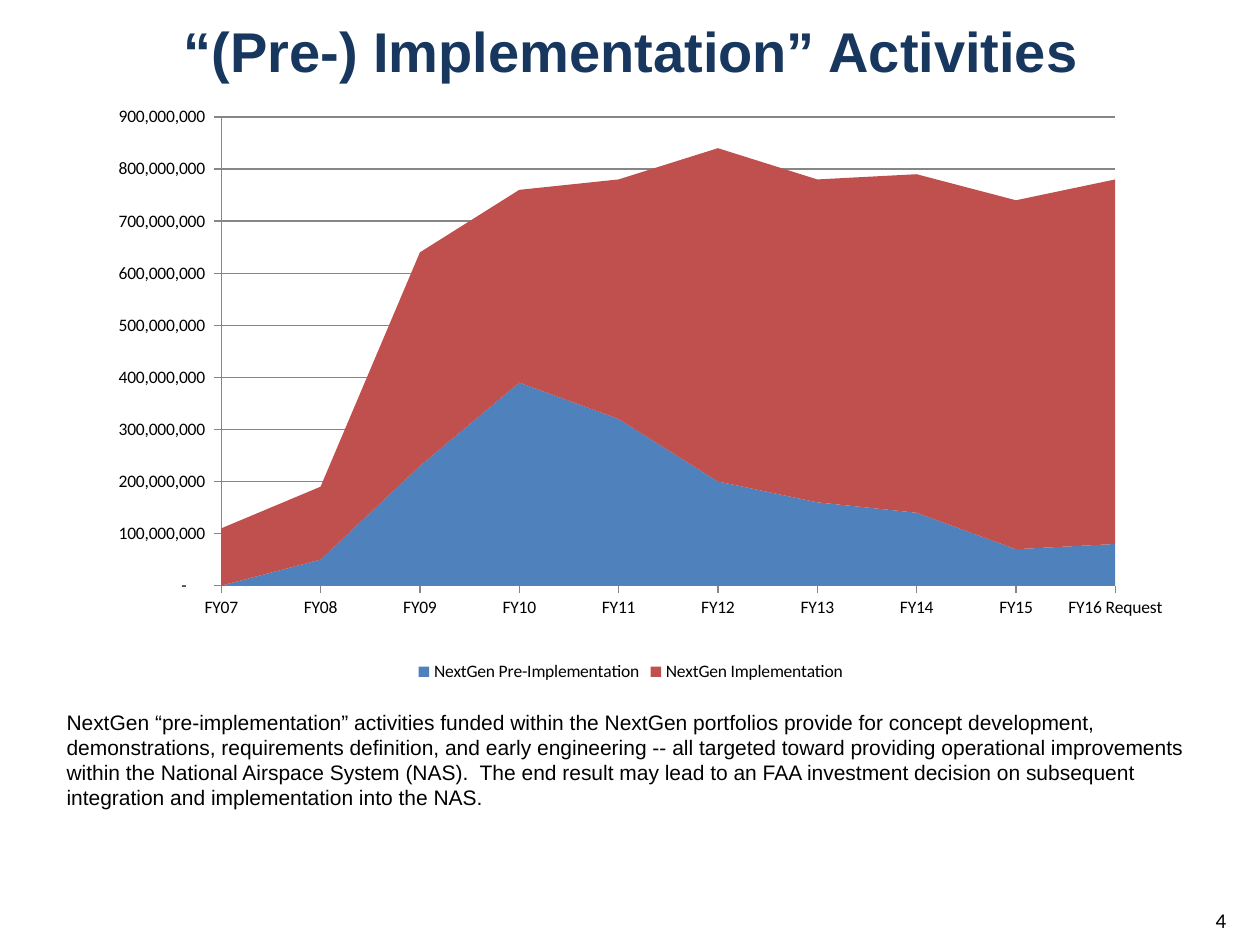
from lxml.etree import SubElement
from pptx import Presentation
from pptx.chart.data import CategoryChartData
from pptx.dml.color import RGBColor
from pptx.enum.chart import XL_CHART_TYPE, XL_LEGEND_POSITION, XL_TICK_MARK
from pptx.enum.text import MSO_ANCHOR, PP_ALIGN
from pptx.oxml.ns import qn
from pptx.util import Inches, Pt

COLORS = {
    "title": "17375E",
    "text": "000000",
    "grid": "868686",
    "pre_implementation": "4F81BD",
    "implementation": "C0504D",
}
MILLION = 1_000_000
YEARS = [f"FY{year:02d}" for year in range(7, 16)] + ["FY16 Request"]
# Name, colour key, funding in millions
FUNDING = [
    ("NextGen Pre-Implementation", "pre_implementation",
     [0, 50, 230, 390, 320, 200, 160, 140, 70, 80]),
    ("NextGen Implementation", "implementation",
     [110, 140, 410, 370, 460, 640, 620, 650, 670, 700]),
]
PLOT_LAYOUT = {"x": 0.12, "y": 0.04, "w": 0.83, "h": 0.79}
EXPLANATION = (
    "NextGen “pre-implementation” activities funded within the NextGen portfolios "
    "provide for concept development, demonstrations, requirements definition, and "
    "early engineering -- all targeted toward providing operational improvements "
    "within the National Airspace System (NAS).  The end result may lead to an FAA "
    "investment decision on subsequent integration and implementation into the NAS."
)


def color(key):
    return RGBColor.from_string(COLORS[key])


def add_text(slide, box, text, size=12, font_name="Arial", color_key="text",
             bold=False, align=PP_ALIGN.LEFT, anchor=MSO_ANCHOR.TOP):
    frame = slide.shapes.add_textbox(*map(Inches, box)).text_frame
    frame.word_wrap = True
    frame.vertical_anchor = anchor
    paragraph = frame.paragraphs[0]
    paragraph.text = text
    paragraph.alignment = align
    font = paragraph.font
    font.name, font.size, font.bold = font_name, Pt(size), bold
    font.color.rgb = color(color_key)


def set_plot_layout(chart):
    """Fix the inner plot area as fractions of the chart."""
    plot_area = chart.element.find(".//" + qn("c:plotArea"))
    layout = plot_area.find(qn("c:layout"))
    if layout is None:
        layout = SubElement(plot_area, qn("c:layout"))
        plot_area.insert(0, layout)
    manual = SubElement(layout, qn("c:manualLayout"))
    settings = {"layoutTarget": "inner", "xMode": "edge", "yMode": "edge", **PLOT_LAYOUT}
    for tag, value in settings.items():
        SubElement(manual, qn(f"c:{tag}")).set("val", str(value))
    # Areas start on the value axis itself
    plot_area.find(".//" + qn("c:crossBetween")).set("val", "midCat")


def style_axis(axis):
    axis.major_tick_mark = XL_TICK_MARK.OUTSIDE
    axis.minor_tick_mark = XL_TICK_MARK.NONE
    axis.format.line.color.rgb = color("grid")
    axis.format.line.width = Pt(0.75)


def add_funding_chart(slide, box):
    data = CategoryChartData()
    data.categories = YEARS
    for name, _, millions in FUNDING:
        data.add_series(name, [value * MILLION for value in millions])
    chart = slide.shapes.add_chart(
        XL_CHART_TYPE.AREA_STACKED, *map(Inches, box), data).chart
    chart.has_title = False
    chart.font.name, chart.font.size = "Calibri", Pt(10)
    chart.font.color.rgb = color("text")

    for series, (_, color_key, _) in zip(chart.plots[0].series, FUNDING):
        series.format.fill.solid()
        series.format.fill.fore_color.rgb = color(color_key)

    # Axes and gridlines
    style_axis(chart.category_axis)
    chart.category_axis.has_major_gridlines = False
    value_axis = chart.value_axis
    style_axis(value_axis)
    value_axis.minimum_scale, value_axis.maximum_scale = 0, 900 * MILLION
    value_axis.major_unit = 100 * MILLION
    value_axis.has_major_gridlines = True
    gridline = value_axis.major_gridlines.format.line
    gridline.color.rgb, gridline.width = color("grid"), Pt(0.75)
    labels = value_axis.tick_labels
    labels.number_format = r'_(* #,##0_);_(* \(#,##0\);_(* "-"??_);_(@_)'
    labels.number_format_is_linked = False

    chart.has_legend = True
    chart.legend.position = XL_LEGEND_POSITION.BOTTOM
    chart.legend.include_in_layout = False
    set_plot_layout(chart)


def build_slide(presentation):
    slide = presentation.slides.add_slide(presentation.slide_layouts[6])
    # Title
    add_text(slide, (0.51, 0, 9, 0.8), "“(Pre-) Implementation” Activities",
             size=32, color_key="title", bold=True,
             align=PP_ALIGN.CENTER, anchor=MSO_ANCHOR.MIDDLE)
    # Funding by year, with its explanation
    add_funding_chart(slide, (0.73, 0.74, 8.55, 4.71))
    add_text(slide, (0.43, 5.58, 9.16, 0.91), EXPLANATION)
    # Page number
    add_text(slide, (7.5, 7.1, 2.33, 0.4), "4", font_name="Calibri",
             align=PP_ALIGN.RIGHT, anchor=MSO_ANCHOR.MIDDLE)


def main():
    presentation = Presentation()
    presentation.slide_width, presentation.slide_height = Inches(10), Inches(7.5)
    build_slide(presentation)
    presentation.save("out.pptx")


if __name__ == "__main__":
    main()
